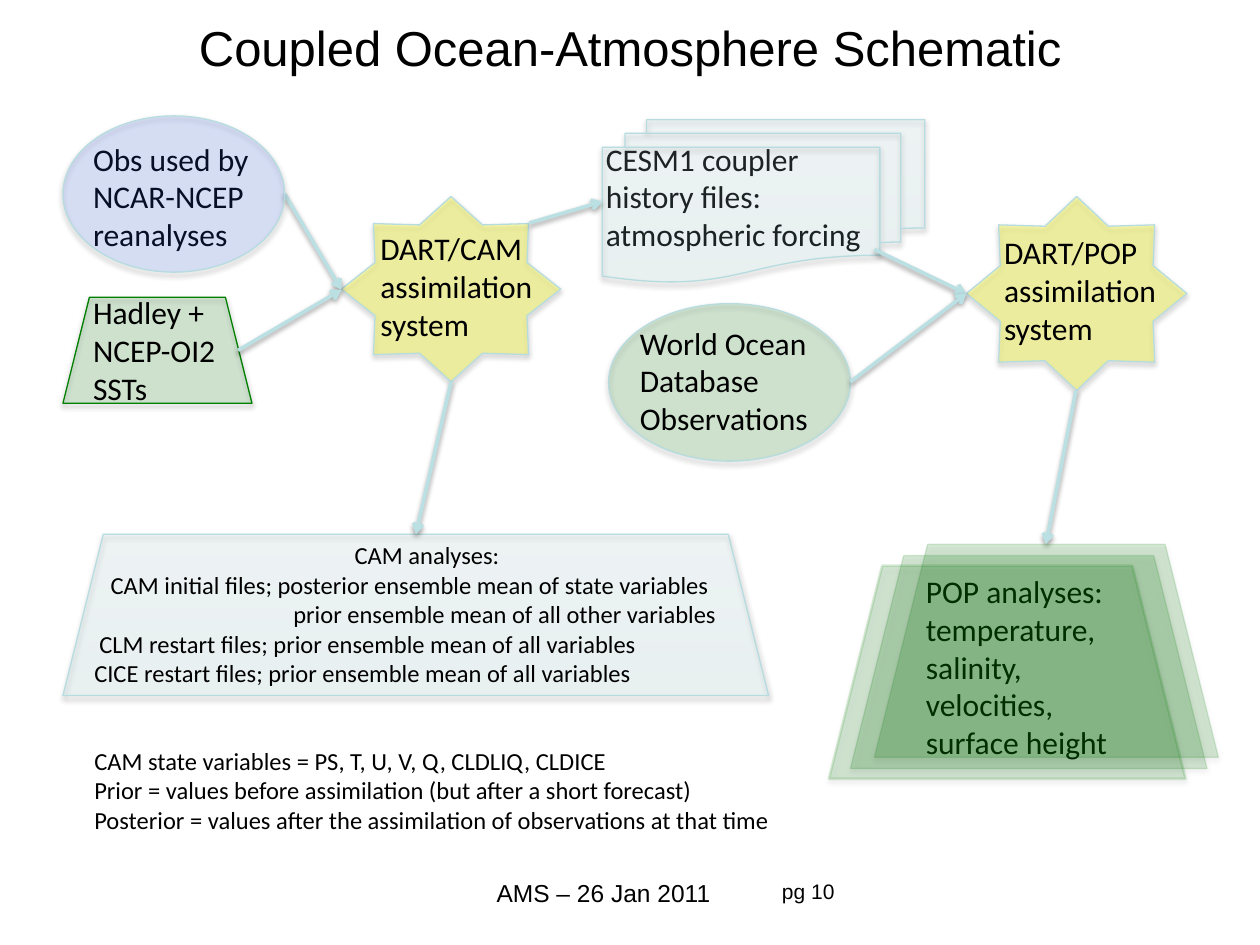
import pptx
import pptx.dml.color
import pptx.enum.shapes
import pptx.enum.text
import pptx.oxml
import pptx.oxml.ns
import pptx.util

Inches = pptx.util.Inches
Pt = pptx.util.Pt
RGBColor = pptx.dml.color.RGBColor
Kind = pptx.enum.shapes.MSO_SHAPE
Align = pptx.enum.text.PP_ALIGN
qn = pptx.oxml.ns.qn

BLACK = RGBColor(0x00, 0x00, 0x00)
GREEN = RGBColor(0x00, 0x80, 0x00)
YELLOW = RGBColor(0xFF, 0xFF, 0x00)
BLUE = RGBColor(0x33, 0x66, 0xFF)
OUTLINE = RGBColor(0xB6, 0xDC, 0xDF)
ARROW = RGBColor(0xBB, 0xE0, 0xE3)
PALE_START = RGBColor(0xB5, 0xE5, 0xE9)
PALE_END = RGBColor(0xD3, 0xFB, 0xFF)
PALE = [PALE_START, PALE_END]


def add_element(parent, tag, **attributes):
    element = pptx.oxml.parse_xml(f"<a:{tag} {pptx.oxml.ns.nsdecls('a')}/>")
    for name, value in attributes.items():
        element.set(name, str(value))
    parent.append(element)
    return element


def set_opacity(element, percent):
    for color in element.iter(qn("a:srgbClr")):
        add_element(color, "alpha", val=percent * 1000)


def add_shadow(effects, opacity, distance):
    shadow = add_element(effects, "outerShdw", blurRad=Pt(3.1), dist=Pt(distance),
                         dir=5400000, rotWithShape=0)
    color = add_element(shadow, "srgbClr", val=str(BLACK))
    add_element(color, "alpha", val=opacity * 1000)


def add_node(page, kind, place, fill, opacity=15, line=OUTLINE, width=0.75, line_opacity=100):
    shape = page.shapes.add_shape(kind, *map(Inches, place))
    properties = shape._element.spPr
    if isinstance(fill, list):
        shape.fill.gradient()
        shape.fill.gradient_angle = 90
        for stop, color in zip(shape.fill.gradient_stops, fill):
            stop.color.rgb = color
    else:
        shape.fill.solid()
        shape.fill.fore_color.rgb = fill
    set_opacity(properties, opacity)
    shape.line.color.rgb = line
    shape.line.width = Pt(width)
    if line_opacity < 100:
        set_opacity(properties.find(qn("a:ln")), line_opacity)
    shape.shadow.inherit = False
    add_shadow(properties.find(qn("a:effectLst")), 35, 1.8)


def add_arrow(page, start, end):
    arrow = page.shapes.add_connector(pptx.enum.shapes.MSO_CONNECTOR.STRAIGHT,
                                      *map(Inches, start + end))
    arrow.line.color.rgb = ARROW
    arrow.line.width = Pt(2)
    properties = arrow._element.spPr
    add_element(properties.find(qn("a:ln")), "tailEnd", type="arrow")
    add_shadow(add_element(properties, "effectLst"), 38, 1.6)


def write(para, text, size, font, align):
    para.alignment = align
    span = para.add_run()
    span.text = text
    span.font.size = Pt(size)
    span.font.name = font
    span.font.color.rgb = BLACK


def add_text(page, place, lines, size=18, font="Calibri", align=Align.LEFT,
             wrap=False, grow=True):
    box = page.shapes.add_textbox(*map(Inches, place))
    frame = box.text_frame
    frame.word_wrap = wrap
    if grow:
        frame.auto_size = pptx.enum.text.MSO_AUTO_SIZE.SHAPE_TO_FIT_TEXT
    for index, line in enumerate(lines):
        para = frame.add_paragraph() if index else frame.paragraphs[0]
        write(para, line, size, font, align)
    return frame


def add_title(page, text):
    title = page.shapes.title
    title.left, title.top, title.width, title.height = map(Inches, (0.5, 0, 9, 0.74))
    title.text_frame.vertical_anchor = pptx.enum.text.MSO_ANCHOR.MIDDLE
    write(title.text_frame.paragraphs[0], text, 28, "Arial", Align.CENTER)


def add_cam_analyses(page):
    frame = add_text(page, (0.65, 4.24, 5.26, 1.28), [
        "CAM analyses:",
        "CAM initial files; posterior ensemble mean of state variables",
        "prior ensemble mean of all other variables",
        "CLM restart files; prior ensemble mean of all variables",
        "CICE restart files; prior ensemble mean of all variables",
    ], size=14, wrap=True)
    for para, indent in zip(frame.paragraphs, (0.22, 0.13, 1.58, 0.04, 0)):
        properties = para._p.get_or_add_pPr()
        properties.set("marL", str(Inches(indent)))
        properties.set("indent", "0")
    frame.paragraphs[0].alignment = Align.CENTER


def main():
    deck = pptx.Presentation()
    deck.slide_width, deck.slide_height = Inches(10), Inches(7.5)
    page = deck.slides.add_slide(deck.slide_layouts[5])

    add_title(page, "Coupled Ocean-Atmosphere Schematic")
    for place, text, size in (
        ((6.08, 6.92, 0.67, 0.33), "pg 10", 12),
        ((3.83, 6.92, 1.92, 0.42), "AMS – 26 Jan 2011", 14),
    ):
        add_text(page, place, [text], size, "Arial", Align.CENTER, wrap=True, grow=False)

    add_node(page, Kind.TRAPEZOID, (0.5, 4.24, 5.6, 1.28), PALE)
    add_node(page, Kind.TRAPEZOID, (0.5, 2.36, 1.5, 0.84), GREEN, line=GREEN)
    add_node(page, Kind.OVAL, (4.83, 2.41, 1.92, 1.25), GREEN)
    add_node(page, Kind.STAR_8_POINT, (7.67, 1.56, 1.75, 1.54), YELLOW, opacity=30)
    add_node(page, Kind.STAR_8_POINT, (2.71, 1.56, 1.74, 1.47), YELLOW, opacity=30)

    add_text(page, (0.64, 2.28, 1.76, 1), ["Hadley +", "NCEP-OI2", "SSTs"], wrap=True)
    for place, lines in (
        ((0.64, 1.06, 1.44, 1), ["Obs used by", "NCAR-NCEP", "reanalyses"]),
        ((2.92, 1.77, 1.41, 1), ["DART/CAM", "assimilation", "system"]),
        ((4.71, 1.06, 2.24, 1), ["CESM1 coupler", "history files:", "atmospheric forcing"]),
        ((7.87, 1.8, 1.42, 1), ["DART/POP", "assimilation", "system"]),
        ((4.98, 2.52, 1.54, 1), ["World Ocean", "Database", "Observations"]),
        ((7.25, 4.49, 1.65, 1.6),
         ["POP analyses:", "temperature,", "salinity,", "velocities,", "surface height"]),
    ):
        add_text(page, place, lines)
    add_cam_analyses(page)
    add_text(page, (0.65, 5.87, 5.57, 0.8), [
        "CAM state variables = PS, T, U, V, Q, CLDLIQ, CLDICE",
        "Prior = values before assimilation (but after a short forecast)",
        "Posterior = values after the assimilation of observations at that time",
    ], size=14)

    add_node(page, Kind.FLOWCHART_MULTIDOCUMENT, (4.78, 0.95, 2.56, 1.29), PALE)
    for start, end in (
        ((2.26, 1.54), (2.71, 2.3)),
        ((1.89, 2.78), (2.71, 2.3)),
        ((4.2, 1.77), (4.78, 1.6)),
        ((6.94, 1.98), (7.67, 2.33)),
        ((6.75, 3.03), (7.67, 2.33)),
        ((3.58, 3.03), (3.3, 4.24)),
        ((8.54, 3.1), (8.3, 4.32)),
    ):
        add_arrow(page, start, end)

    add_node(page, Kind.OVAL, (0.5, 0.92, 1.76, 1.24), BLUE)
    for left, top, width, weight in (
        (6.94, 4.32, 2.73, 0.75),
        (6.75, 4.41, 2.83, 0.75),
        (6.58, 4.49, 2.83, 1.5),
    ):
        add_node(page, Kind.TRAPEZOID, (left, top, width, 1.69), GREEN,
                 line=GREEN, width=weight, line_opacity=15)

    deck.save("out.pptx")


if __name__ == "__main__":
    main()
